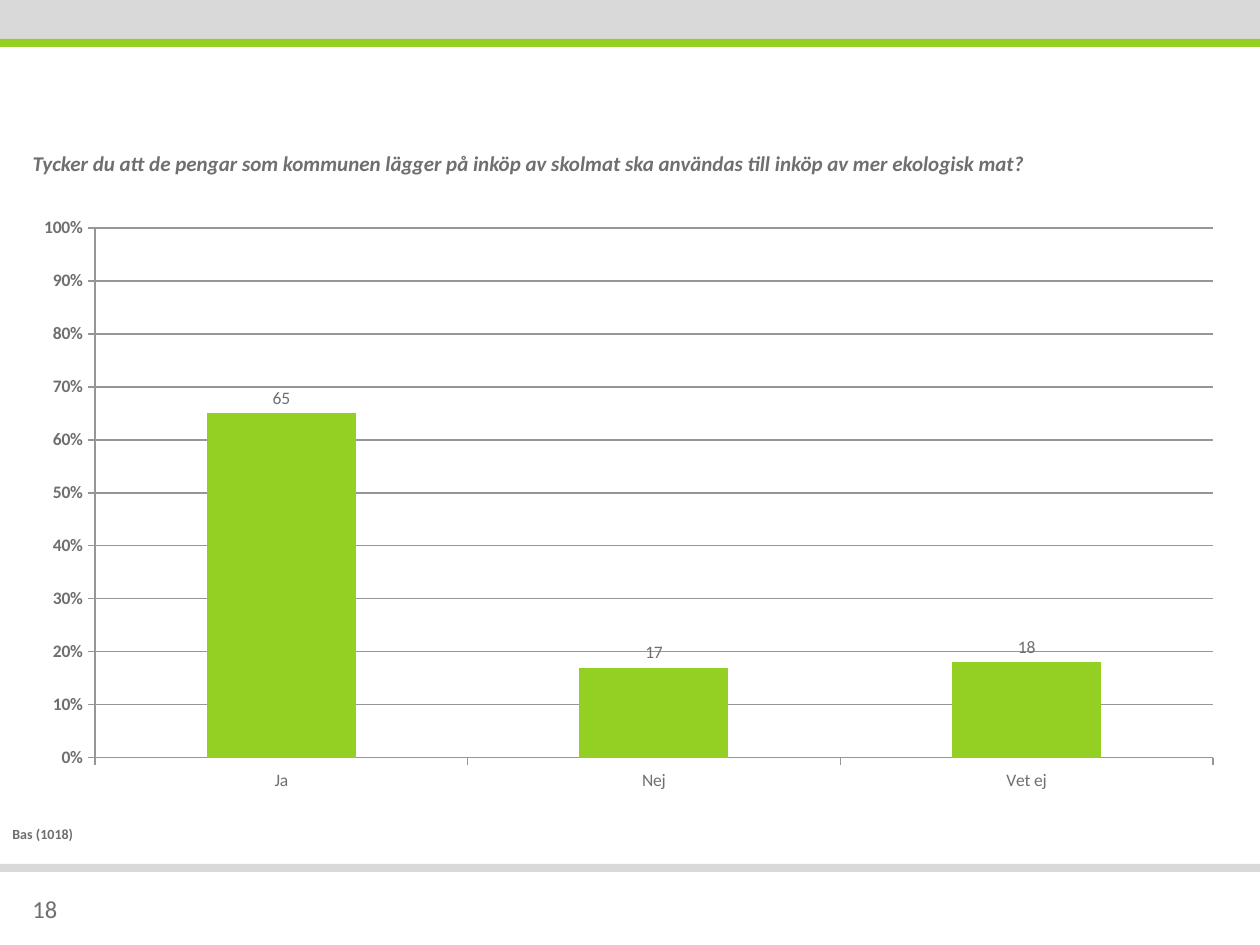
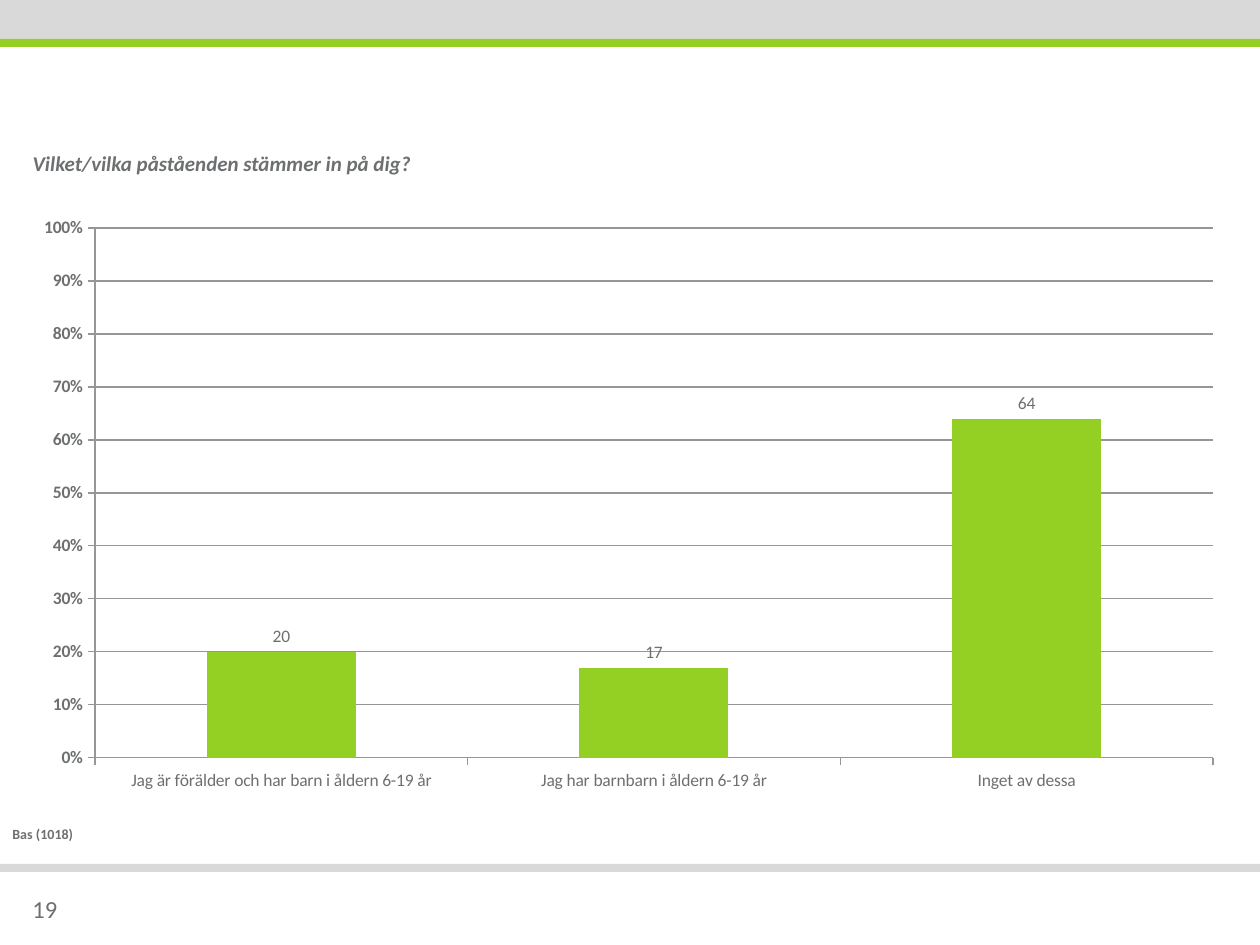
from lxml import etree
from pptx import Presentation
from pptx.chart.data import CategoryChartData
from pptx.dml.color import RGBColor
from pptx.enum.chart import XL_CHART_TYPE, XL_LABEL_POSITION, XL_TICK_MARK
from pptx.enum.shapes import MSO_SHAPE
from pptx.enum.text import MSO_ANCHOR
from pptx.oxml import parse_xml
from pptx.oxml.ns import nsdecls, qn
from pptx.util import Pt

EMU_PER_PX = 914400 / 126
PAGE_WIDTH, PAGE_HEIGHT = 1260, 945
FONT = "Calibri"
COLORS = {"text": "6D6F71", "green": "93D023", "band": "D9D9D9", "axis": "969696"}

COLUMNS = XL_CHART_TYPE.COLUMN_CLUSTERED
OUTSIDE_END = XL_LABEL_POSITION.OUTSIDE_END
TICK_OUTSIDE = XL_TICK_MARK.OUTSIDE
RECTANGLE = MSO_SHAPE.RECTANGLE
TOP, MIDDLE = MSO_ANCHOR.TOP, MSO_ANCHOR.MIDDLE

BANDS = [(0, 39, "band"), (864, 8, "band"), (39, 8, "green")]
CHART_AREA = (20, 207, 1218, 595)
PLOT_AREA = (95, 228, 1118, 530)
BASE_NOTE = "Bas (1018)"
FIRST_PAGE_NUMBER = 18

QUESTIONS = [
    (
        "Tycker du att de pengar som kommunen lägger på inköp av skolmat "
        "ska användas till inköp av mer ekologisk mat?",
        {"Ja": 65, "Nej": 17, "Vet ej": 18},
    ),
    (
        "Vilket/vilka påståenden stämmer in på dig?",
        {
            "Jag är förälder och har barn i åldern 6-19 år": 20,
            "Jag har barnbarn i åldern 6-19 år": 17,
            "Inget av dessa": 64,
        },
    ),
]


def px(length):
    return round(length * EMU_PER_PX)


def place(*lengths):
    return [px(length) for length in lengths]


def color(name):
    return RGBColor.from_string(COLORS[name])


def style_font(font, size, bold=False, italic=False):
    font.name = FONT
    font.size = Pt(size)
    font.bold = bold
    font.italic = italic
    font.color.rgb = color("text")


def write(box, text, size, bold=False, italic=False, anchor=TOP):
    frame = box.text_frame
    frame.text = text
    frame.word_wrap = True
    frame.vertical_anchor = anchor
    style_font(frame.paragraphs[0].runs[0].font, size, bold, italic)


def add_bands(page):
    for top, height, fill in BANDS:
        band = page.shapes.add_shape(RECTANGLE, *place(0, top, PAGE_WIDTH, height))
        band.shadow.inherit = False
        band.fill.solid()
        band.fill.fore_color.rgb = color(fill)
        band.line.fill.background()


def add_text(page, area, text, size, **style):
    box = page.shapes.add_textbox(*place(*area))
    write(box, text, size, **style)


def fill_question(page, question):
    box = page.placeholders[1]
    box.left, box.top, box.width, box.height = place(20, 144, 1221, 72)
    write(box, question, 12, bold=True, italic=True)
    paragraph = box.text_frame.paragraphs[0]
    paragraph.space_before = Pt(0)
    properties = paragraph._p.get_or_add_pPr()
    properties.set("marL", "0")
    properties.set("indent", "0")
    etree.SubElement(properties, qn("a:buNone"))


def fix_plot_area(chart):
    left, top, width, height = CHART_AREA
    plot_left, plot_top, plot_width, plot_height = PLOT_AREA
    shares = {
        "x": (plot_left - left) / width,
        "y": (plot_top - top) / height,
        "w": plot_width / width,
        "h": plot_height / height,
    }
    modes = "".join(f'<c:{side}Mode val="edge"/>' for side in "xy")
    values = "".join(f'<c:{side} val="{share:.4f}"/>' for side, share in shares.items())
    layout = parse_xml(
        f'<c:layout {nsdecls("c")}><c:manualLayout><c:layoutTarget val="inner"/>'
        f"{modes}{values}</c:manualLayout></c:layout>"
    )
    plot_area = chart._chartSpace.chart.plotArea
    for previous in plot_area.findall(qn("c:layout")):
        plot_area.remove(previous)
    plot_area.insert(0, layout)


def style_line(line):
    line.color.rgb = color("axis")
    line.width = Pt(0.75)


def style_axis(axis, bold=False):
    axis.major_tick_mark = TICK_OUTSIDE
    style_line(axis.format.line)
    style_font(axis.tick_labels.font, 10, bold)


def add_answer_chart(page, answers):
    data = CategoryChartData()
    data.categories = list(answers)
    data.add_series("Series 1", list(answers.values()))
    chart = page.shapes.add_chart(COLUMNS, *place(*CHART_AREA), data).chart
    chart.has_legend = False
    chart.has_title = False
    style_font(chart.font, 18)
    fix_plot_area(chart)

    style_axis(chart.category_axis)
    value_axis = chart.value_axis
    style_axis(value_axis, bold=True)
    value_axis.minimum_scale = 0
    value_axis.maximum_scale = 100
    value_axis.major_unit = 10
    value_axis.tick_labels.number_format = '0"%"'
    value_axis.tick_labels.number_format_is_linked = False
    style_line(value_axis.major_gridlines.format.line)

    plot = chart.plots[0]
    plot.gap_width = 150
    plot.vary_by_categories = False
    columns = plot.series[0]
    columns.format.fill.solid()
    columns.format.fill.fore_color.rgb = color("green")
    labels = columns.data_labels
    labels.show_value = True
    labels.position = OUTSIDE_END
    style_font(labels.font, 10)


def add_question_page(deck, number, question, answers):
    page = deck.slides.add_slide(deck.slide_layouts[1])
    title = page.shapes.title._element
    title.getparent().remove(title)
    add_bands(page)
    add_text(page, (20, 876, 97, 66), str(number), 14, anchor=MIDDLE)
    add_answer_chart(page, answers)
    fill_question(page, question)
    add_text(page, (0, 819, PAGE_WIDTH, 30), BASE_NOTE, 8, bold=True)


def main():
    deck = Presentation()
    deck.slide_width, deck.slide_height = place(PAGE_WIDTH, PAGE_HEIGHT)
    for number, (question, answers) in enumerate(QUESTIONS, FIRST_PAGE_NUMBER):
        add_question_page(deck, number, question, answers)
    deck.save("out.pptx")


if __name__ == "__main__":
    main()
